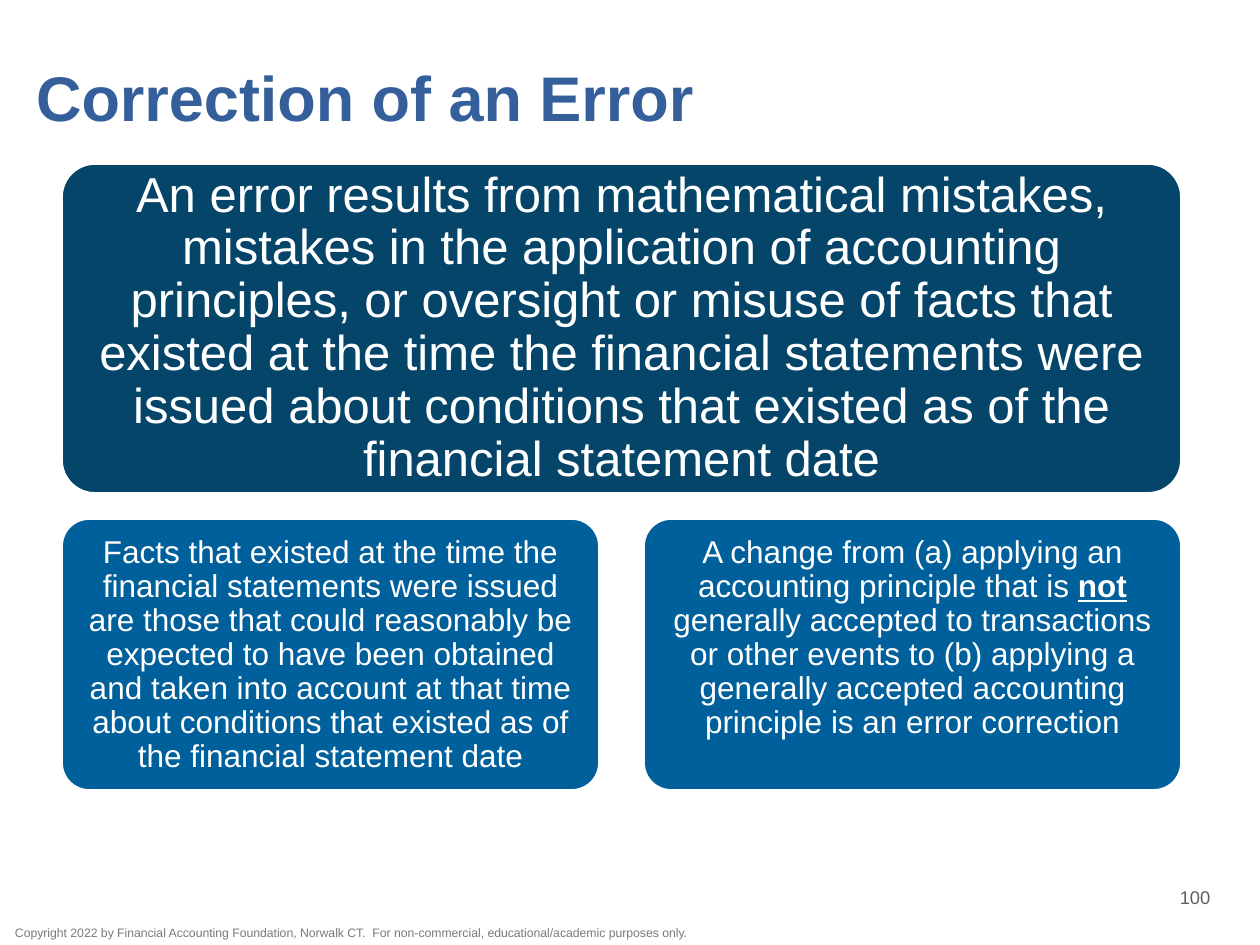
from pptx import Presentation
from pptx.dml.color import RGBColor
from pptx.enum.shapes import MSO_SHAPE
from pptx.enum.text import MSO_ANCHOR, PP_ALIGN
from pptx.util import Pt

ROUNDED = MSO_SHAPE.ROUNDED_RECTANGLE
LEFT, CENTER = PP_ALIGN.LEFT, PP_ALIGN.CENTER
TOP, MIDDLE = MSO_ANCHOR.TOP, MSO_ANCHOR.MIDDLE
SCALE = 914400 / 126  # EMU in one px


def px(*lengths):
    return [round(length * SCALE) for length in lengths]


def write(box, spans, size, color, bold=False, align=LEFT, anchor=TOP,
          insets=(0, 0, 0, 0), spacing=None):
    """Fill a box with one paragraph; spans marked True are bold and underlined."""
    frame = box.text_frame
    frame.word_wrap = True
    frame.vertical_anchor = anchor
    (frame.margin_left, frame.margin_top,
     frame.margin_right, frame.margin_bottom) = px(*insets)
    para = frame.paragraphs[0]
    para.alignment = align
    para.line_spacing = spacing
    for text, marked in spans:
        span = para.add_run()
        span.text = text
        span.font.name = "Arial"
        span.font.size = Pt(size)
        span.font.bold = bold or marked
        span.font.underline = marked
        span.font.color.rgb = RGBColor.from_string(color)


deck = Presentation()
deck.slide_width, deck.slide_height = px(1260, 945)
page = deck.slides.add_slide(deck.slide_layouts[5])

# Title
title = page.shapes.title
title.left, title.top, title.width, title.height = px(23, 40, 1196, 123)
write(title, [("Correction of an Error", False)], 36, "355F9A", bold=True,
      anchor=MIDDLE, insets=(13, 0, 0, 0), spacing=Pt(37))

# Definition above two explanations: place, fill, text size, inset, anchor, spans
cards = [
    ((62, 164, 1119, 329), "054569", 28, 15, MIDDLE, [
        ("An error results from mathematical mistakes, mistakes in the "
         "application of accounting principles, or oversight or misuse of facts "
         "that existed at the time the financial statements were issued about "
         "conditions that existed as of the financial statement date", False)]),
    ((62, 519, 537, 271), "00609C", 18, 9, TOP, [
        ("Facts that existed at the time the financial statements were issued "
         "are those that could reasonably be expected to have been obtained and "
         "taken into account at that time about conditions that existed as of "
         "the financial statement date", False)]),
    ((644, 519, 537, 271), "00609C", 18, 9, TOP, [
        ("A change from (a) applying an accounting principle that is ", False),
        ("not", True),
        (" generally accepted to transactions or other events to (b) applying a "
         "generally accepted accounting principle is an error correction", False)]),
]
for place, fill, size, inset, anchor, spans in cards:
    card = page.shapes.add_shape(ROUNDED, *px(*place))
    card.adjustments[0] = 0.1
    card.shadow.inherit = False
    card.fill.solid()
    card.fill.fore_color.rgb = RGBColor.from_string(fill)
    card.line.color.rgb = RGBColor.from_string("FFFFFF")
    card.line.width = Pt(1)
    write(card, spans, size, "FFFFFF", align=CENTER, anchor=anchor,
          insets=[inset] * 4, spacing=0.9)

# Copyright line and page number
copyright_box = page.shapes.add_textbox(*px(15, 925, 684, 18))
write(copyright_box, [
    ("Copyright 2022 by Financial Accounting Foundation, Norwalk CT.  "
     "For non-commercial, educational/academic purposes only.", False)],
    7, "78797B")
number_box = page.shapes.add_textbox(*px(1130, 876, 130, 42))
write(number_box, [("100", False)], 10.5, "5F5F5F", align=CENTER,
      anchor=MIDDLE, insets=(13, 6, 13, 6))

deck.save("out.pptx")
